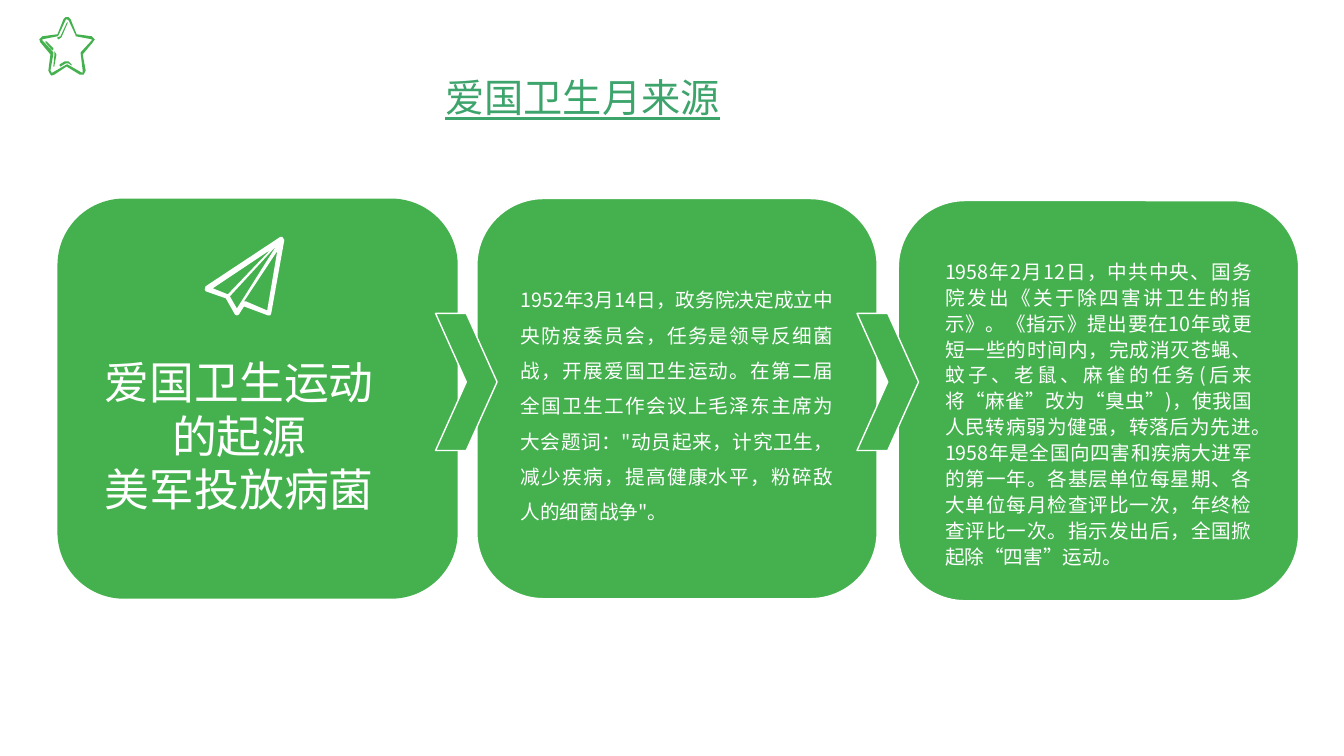
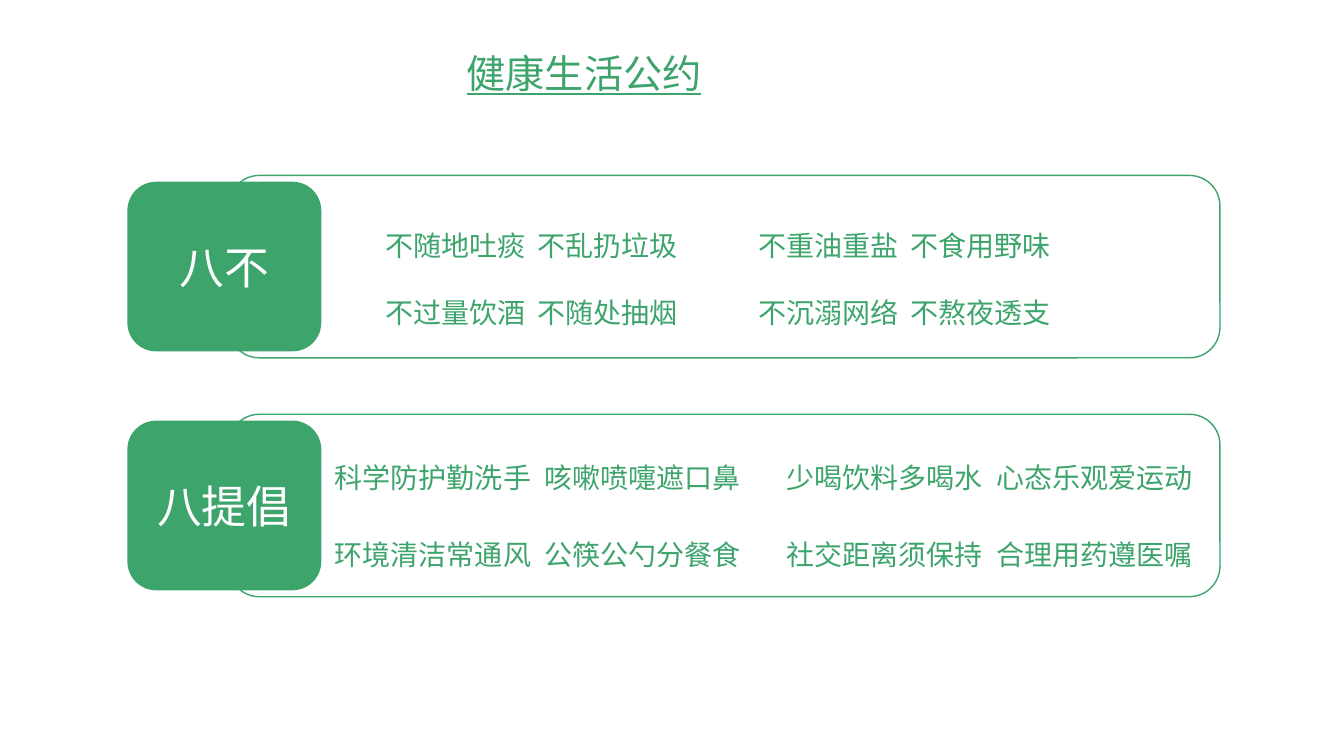
from lxml import etree
from pptx import Presentation
from pptx.dml.color import RGBColor
from pptx.enum.shapes import MSO_SHAPE
from pptx.enum.text import MSO_ANCHOR, MSO_AUTO_SIZE, PP_ALIGN
from pptx.oxml.ns import qn
from pptx.util import Inches, Pt

ROUNDED = MSO_SHAPE.ROUNDED_RECTANGLE
CHEVRON = MSO_SHAPE.CHEVRON
TOP, MIDDLE = MSO_ANCHOR.TOP, MSO_ANCHOR.MIDDLE
GROW, FIXED = MSO_AUTO_SIZE.SHAPE_TO_FIT_TEXT, MSO_AUTO_SIZE.NONE
LEFT, CENTER, JUSTIFY = PP_ALIGN.LEFT, PP_ALIGN.CENTER, PP_ALIGN.JUSTIFY

COLORS = {"white": "FFFFFF", "leaf": "44B14E", "jade": "3DA46C"}
TITLE_FONT = "Noto Sans CJK JP"
BODY_FONT = "Noto Sans CJK SC"
HUNDREDTH = Inches(0.01)

STAR = [
    [(55, 22), (52, 19), (37, 17), (31, 2), (29, 0), (26, 0), (24, 2),
     (18, 17), (3, 19), (0, 22), (1, 25), (11, 37), (9, 53), (11, 57),
     (12, 58), (15, 57), (27, 49), (40, 57), (44, 57), (46, 53), (43, 37),
     (53, 25)],
    [(52, 23), (41, 35), (41, 36), (43, 53), (43, 55), (42, 55), (28, 47),
     (27, 47), (13, 55), (12, 55), (11, 53), (14, 36), (14, 35), (3, 23),
     (3, 22), (18, 19), (19, 18), (26, 3), (27, 2), (29, 3), (36, 18),
     (36, 19), (52, 22)],
    [(14, 31), (14, 32), (13, 33), (12, 32), (6, 25), (6, 24), (7, 24)],
    [(15, 34), (17, 37), (15, 48), (15, 49), (14, 49), (14, 48), (15, 37),
     (15, 35)],
    [(32, 47), (32, 48), (29, 46), (26, 46), (21, 49), (20, 48), (20, 47),
     (25, 44), (29, 44)],
    [(19, 22), (18, 21), (18, 20), (21, 19), (27, 6), (28, 5), (28, 6),
     (22, 20)],
]
PAPER_PLANE = [
    [(62, 73), (41, 64), (39, 64), (72, 14)],
    [(25, 59), (71, 9), (32, 71)],
    [(8, 51), (65, 13), (23, 57)],
    [(77, 0), (75, 0), (1, 49), (0, 52), (1, 54), (21, 61), (30, 77),
     (32, 78), (34, 77), (39, 69), (63, 78), (65, 78), (66, 76), (79, 3)],
]

ORIGIN_HEADING = ["爱国卫生运动的起源", "美军投放病菌"]
STORY_1952 = (
    "1952年3月14日，政务院决定成立中央防疫委员会，任务是领导反细菌战，"
    "开展爱国卫生运动。在第二届全国卫生工作会议上毛泽东主席为大会题词："
    "\"动员起来，计究卫生，减少疾病，提高健康水平，粉碎敌人的细菌战争\"。"
)
STORY_1958 = (
    "1958年2月12日，中共中央、国务院发出《关于除四害讲卫生的指示》。"
    "《指示》提出要在10年或更短一些的时间内，完成消灭苍蝇、蚊子、老鼠、"
    "麻雀的任务(后来将“麻雀”改为“臭虫”)，使我国人民转病弱为健强，"
    "转落后为先进。1958年是全国向四害和疾病大进军的第一年。"
    "各基层单位每星期、各大单位每月检查评比一次，年终检查评比一次。"
    "指示发出后，全国掀起除“四害”运动。"
)


def color(name):
    return RGBColor.from_string(COLORS[name])


def paint(shape, fill=None, line=None):
    shape.shadow.inherit = False
    if fill:
        shape.fill.solid()
        shape.fill.fore_color.rgb = color(fill)
    else:
        shape.fill.background()
    if line:
        shape.line.color.rgb = color(line)
        shape.line.width = Pt(1)
    else:
        shape.line.fill.background()


def add_panel(slide, box, preset=ROUNDED, fill=None, line=None):
    shape = slide.shapes.add_shape(preset, *map(Inches, box))
    paint(shape, fill, line)
    return shape


def add_text_box(slide, box):
    return slide.shapes.add_textbox(*map(Inches, box))


def add_tab_stop(paragraph, position):
    properties = paragraph._p.get_or_add_pPr()
    tabs = etree.SubElement(properties, qn("a:tabLst"))
    etree.SubElement(tabs, qn("a:tab"), pos=str(Inches(position)), algn="l")


def write(shape, lines, size, ink="white", font=BODY_FONT, align=LEFT,
          spacing=None, tab=None, anchor=TOP, margins=True, fit=GROW,
          underline=None):
    frame = shape.text_frame
    frame.word_wrap = True
    frame.auto_size = fit
    frame.vertical_anchor = anchor
    if not margins:
        frame.margin_left = frame.margin_right = 0
        frame.margin_top = frame.margin_bottom = 0
    for index, line in enumerate(lines):
        paragraph = frame.add_paragraph() if index else frame.paragraphs[0]
        if tab:
            add_tab_stop(paragraph, tab)
        paragraph.alignment = align
        paragraph.line_spacing = spacing
        run = paragraph.add_run()
        run.text = line
        run.font.size = Pt(size)
        run.font.name = font
        run.font.underline = underline
        run.font.color.rgb = color(ink)
        east_asian = etree.Element(qn("a:ea"), typeface=font)
        run.font._element.find(qn("a:latin")).addnext(east_asian)


def add_title(slide, left, top, text):
    write(add_text_box(slide, (left, top, 4.57, 0.57)), [text], 28,
          ink="jade", font=TITLE_FONT, align=JUSTIFY, underline=True)


def add_icon(slide, left, top, contours, fill):
    first, *others = contours
    builder = slide.shapes.build_freeform(*first[0], scale=HUNDREDTH)
    builder.add_line_segments(first[1:], close=True)
    for contour in others:
        builder.move_to(*contour[0])
        builder.add_line_segments(contour[1:], close=True)
    paint(builder.convert_to_shape(Inches(left), Inches(top)), fill)


def add_heading_card(slide, left, top, side):
    add_panel(slide, (left, top, side, side), fill="leaf")
    heading = add_panel(slide, (left + 0.22, top + 1.46, 3.17, 1.79),
                        fill="leaf")
    write(heading, ORIGIN_HEADING, 32, align=CENTER, margins=False)
    add_icon(slide, left + 1.46, top + 0.38, PAPER_PLANE, "white")


def add_story_card(slide, left, top, side, story, inset, height, spacing):
    add_panel(slide, (left, top, side, side), fill="leaf", line="white")
    body = add_panel(slide, (left + 0.3, top + inset, side - 0.6, height),
                     fill="leaf")
    write(body, [story], 14, align=JUSTIFY, spacing=spacing, margins=False)


def add_origin_slide(slide):
    side = 3.97
    add_title(slide, 4.32, 0.68, "爱国卫生月来源")
    add_icon(slide, 0.39, 0.17, STAR, "leaf")
    add_heading_card(slide, 0.57, 1.97, side)
    add_story_card(slide, 4.73, 1.97, side, STORY_1952, 0.64, 2.75, 1.5)
    add_story_card(slide, 8.91, 1.99, side, STORY_1958, 0.4, 3.43, 1.1)
    for left in (4.32, 8.5):
        add_panel(slide, (left, 3.11, 0.61, 1.36), CHEVRON, "leaf", "white")


def add_pledge_row(slide, left, top, label, columns, text_top, spacing, tab):
    add_panel(slide, (left + 1, top, 9.83, 1.81), line="jade")
    badge = add_panel(slide, (left, top + 0.07, 1.91, 1.67),
                      fill="jade", line="jade")
    write(badge, [label], 32, align=CENTER, anchor=MIDDLE, fit=FIXED)
    for offset, width, pairs in columns:
        box = (left + offset, top + text_top, width, 1.6)
        write(add_text_box(slide, box), ["\t".join(pair) for pair in pairs],
              20, ink="jade", spacing=spacing, tab=tab, margins=False)


def add_pledge_slide(slide):
    add_title(slide, 4.53, 0.44, "健康生活公约")
    add_pledge_row(slide, 1.27, 1.74, "八不", [
        (2.55, 3.54, [("不随地吐痰", "不乱扔垃圾"),
                      ("不过量饮酒", "不随处抽烟")]),
        (6.25, 3.54, [("不重油重盐", "不食用野味"),
                      ("不沉溺网络", "不熬夜透支")]),
    ], text_top=0.19, spacing=2.0, tab=1.51)
    add_pledge_row(slide, 1.27, 4.11, "八提倡", [
        (2.05, 4.34, [("科学防护勤洗手", "咳嗽喷嚏遮口鼻"),
                      ("环境清洁常通风", "公筷公勺分餐食")]),
        (6.53, 4.3, [("少喝饮料多喝水", "心态乐观爱运动"),
                     ("社交距离须保持", "合理用药遵医嘱")]),
    ], text_top=0.03, spacing=Pt(55), tab=2.08)


def main():
    presentation = Presentation()
    presentation.slide_width = Inches(13.33)
    presentation.slide_height = Inches(7.5)
    blank = presentation.slide_layouts[6]
    for build in (add_origin_slide, add_pledge_slide):
        build(presentation.slides.add_slide(blank))
    presentation.save("out.pptx")


if __name__ == "__main__":
    main()
